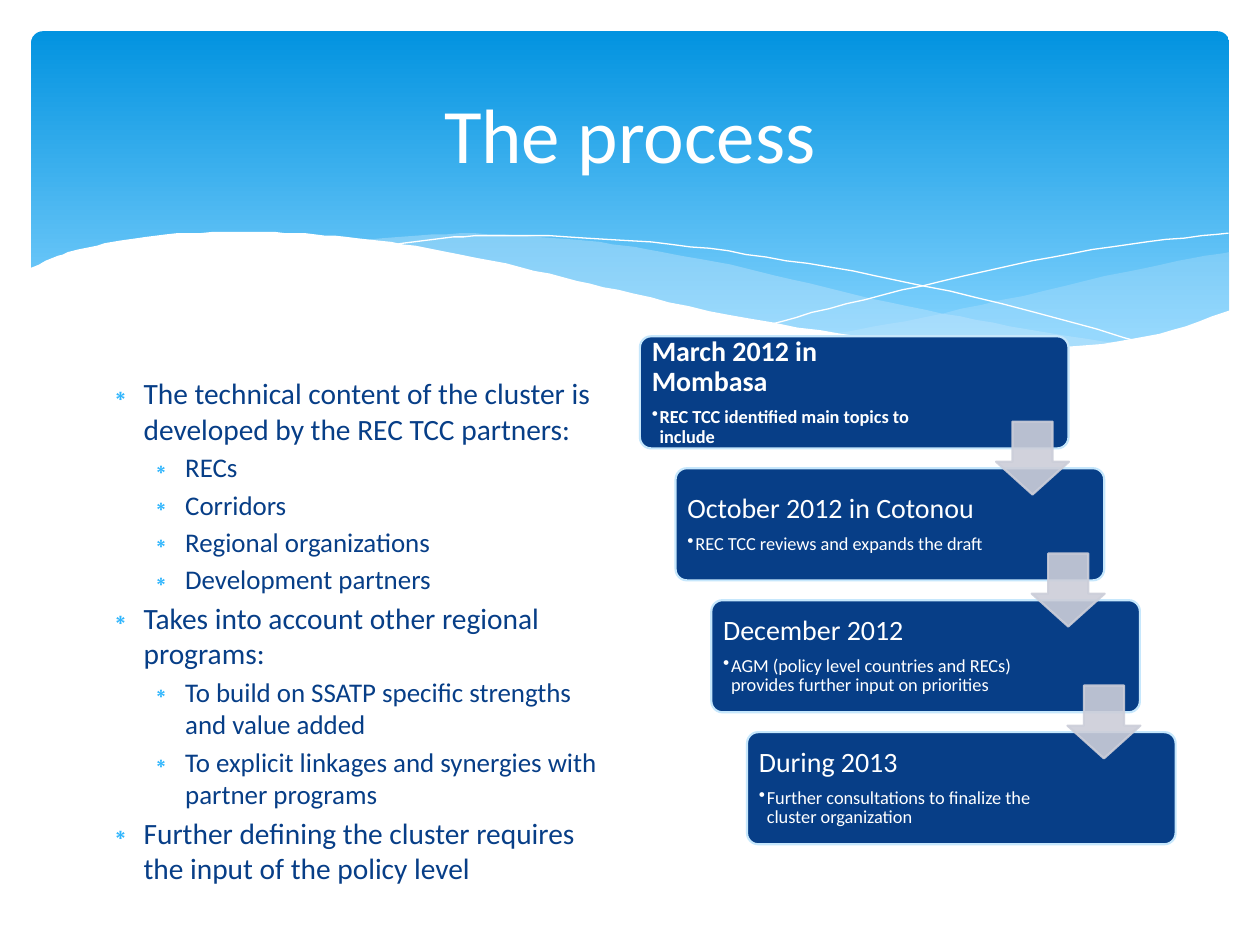
from dataclasses import dataclass
from lxml import etree
from pptx import Presentation
from pptx.dml.color import RGBColor
from pptx.enum.shapes import MSO_SHAPE
from pptx.enum.text import MSO_ANCHOR, MSO_AUTO_SIZE, PP_ALIGN
from pptx.oxml.ns import qn
from pptx.util import Cm, Pt

ROUND, ARROW = MSO_SHAPE.ROUNDED_RECTANGLE, MSO_SHAPE.DOWN_ARROW
MIDDLE, TOP = MSO_ANCHOR.MIDDLE, MSO_ANCHOR.TOP
LEFT, CENTER = PP_ALIGN.LEFT, PP_ALIGN.CENTER
FIXED = MSO_AUTO_SIZE.NONE


@dataclass(frozen=True)
class Theme:
    font: str = "Calibri"
    white: str = "FFFFFF"
    navy: str = "073E87"
    sky: str = "31B6FD"
    pale: str = "C6E7FC"
    gray: str = "CCCED9"
    deep: str = "0293E0"
    light: str = "83D3FE"
    title: float = 44
    main: float = 16.8
    sub: float = 15.4
    head: float = 16
    note: float = 10.5
    edge: float = 1.25


THEME = Theme()
UNIT = Cm(0.0254)

# Curves hold knots in hundredths of an inch.
RIGHT_WAVE = [
    [(976, 200), (935, 207), (861, 223), (779, 242), (706, 257), (661, 265)],
    [(661, 265), (705, 271), (757, 276), (814, 278), (872, 274), (928, 263), (976, 247)],
]
MID_WAVE = [
    [(893, 273), (837, 265), (775, 254), (706, 240), (629, 222), (569, 208),
     (514, 198), (465, 191), (399, 186), (344, 186), (286, 191)],
    [(286, 191), (342, 199), (404, 211), (491, 232), (584, 252), (650, 264),
     (709, 272), (761, 277), (818, 278), (857, 277), (893, 273)],
]
LONG_LINE = [[(309, 195), (344, 190), (387, 187), (450, 188), (533, 194),
              (608, 204), (695, 219), (795, 241), (907, 272)]]
CROSS_LINE = [[(613, 257), (672, 241), (748, 223), (836, 204), (910, 192), (975, 185)]]
FRONT_WAVE = [
    [(977, 246), (930, 262), (875, 273), (809, 277), (744, 274), (668, 265),
     (579, 250), (503, 233), (447, 220), (391, 207), (340, 197), (292, 190),
     (250, 186), (211, 184), (177, 184), (132, 186), (95, 191), (67, 197),
     (46, 203), (23, 213)],
    [(23, 329)],
    [(977, 329)],
]

POINTS = [
    (0, "The technical content of the cluster is developed by the REC TCC partners:"),
    (1, "RECs"),
    (1, "Corridors"),
    (1, "Regional organizations"),
    (1, "Development partners"),
    (0, "Takes into account other regional programs:"),
    (1, "To build on SSATP specific strengths and value added"),
    (1, "To explicit linkages and synergies with partner programs"),
    (0, "Further defining the cluster requires the input of the policy level"),
]
STEPS = [
    ("March 2012 in Mombasa", "REC TCC identified main topics to include"),
    ("October 2012 in Cotonou", "REC TCC reviews and expands the draft"),
    ("December 2012", "AGM (policy level countries and RECs) provides further input on priorities"),
    ("During 2013", "Further consultations to finalize the cluster organization"),
]


def paint(part, fill=None, line=None, width=0, alpha=100):
    part.shadow.inherit = False
    for ink, hue in ((part.fill, fill), (part.line.fill, line)):
        if hue is None:
            ink.background()
        else:
            ink.solid()
            ink.fore_color.rgb = RGBColor.from_string(hue)
    if line:
        part.line.width = Pt(width)
    if alpha < 100:
        for node in part.element.spPr.iter(qn("a:srgbClr")):
            etree.SubElement(node, qn("a:alpha")).set("val", str(alpha * 1000))


def write(frame, text, size, color, first=False, level=0, bold=False, align=LEFT,
          mark=None, tint=None, indent=0, hang=0, before=0, after=0, pitch=1):
    para = frame.paragraphs[0] if first else frame.add_paragraph()
    para.level = level
    if mark:
        props = para._p.get_or_add_pPr()
        props.set("marL", str(Cm(indent)))
        props.set("indent", str(-Cm(hang)))
        shade = etree.SubElement(props, qn("a:buClr"))
        etree.SubElement(shade, qn("a:srgbClr")).set("val", tint or color)
        etree.SubElement(props, qn("a:buChar")).set("char", mark)
    para.alignment = align
    para.line_spacing = pitch
    para.space_before = Pt(0 if first else before)
    para.space_after = Pt(after)
    run = para.add_run()
    run.text = text
    run.font.name, run.font.size, run.font.bold = THEME.font, Pt(size), bold
    run.font.color.rgb = RGBColor.from_string(color)


def set_frame(part, anchor, pad=None):
    frame = part.text_frame
    frame.word_wrap, frame.auto_size = True, FIXED
    frame.vertical_anchor = anchor
    if pad is not None:
        frame.margin_left = frame.margin_right = Cm(pad)
        frame.margin_top = frame.margin_bottom = Cm(pad)
    return frame


def place(part, box):
    part.left, part.top, part.width, part.height = map(Cm, box)


def smooth(knots, count=5):
    ends = [knots[0], *knots, knots[-1]]
    path = [knots[0]]
    for a, b, c, d in zip(ends, ends[1:], ends[2:], ends[3:]):
        for step in range(1, count + 1):
            t = step / count
            path.append(tuple(
                (2 * q + (r - p) * t + (2 * p - 5 * q + 4 * r - s) * t**2
                 + (3 * q - p - 3 * r + s) * t**3) / 2
                for p, q, r, s in zip(a, b, c, d)))
    return path


def add_wave(shapes, box, curves, closed=True, **look):
    path = [spot for knots in curves for spot in smooth(knots)]
    pen = shapes.build_freeform(*path[0], scale=UNIT)
    pen.add_line_segments(path[1:], close=closed)
    paint(pen.convert_to_shape(Cm(box[0]), Cm(box[1])), **look)


def add_header(shapes, box):
    x, y, w, h = box
    panel = shapes.add_shape(ROUND, Cm(x + 0.63), Cm(y + 0.63), Cm(w - 1.25), Cm(h - 0.63))
    panel.adjustments[0] = 0.034
    paint(panel)
    panel.fill.gradient()
    panel.fill.gradient_angle = 270
    for stop, hue, spot in zip(panel.fill.gradient_stops, (THEME.deep, THEME.light), (0, 0.9)):
        stop.color.rgb = RGBColor.from_string(hue)
        stop.position = spot
    add_wave(shapes, box, RIGHT_WAVE, fill=THEME.pale, alpha=29)
    add_wave(shapes, box, MID_WAVE, fill=THEME.pale, alpha=40)
    for curve in (LONG_LINE, CROSS_LINE):
        add_wave(shapes, box, curve, closed=False, line=THEME.white)
    add_wave(shapes, box, FRONT_WAVE, fill=THEME.white)


def add_title(part, box):
    place(part, box)
    write(set_frame(part, MIDDLE), "The process", THEME.title, THEME.white,
          first=True, align=CENTER)


def add_list(part, box):
    place(part, box)
    frame = set_frame(part, TOP)
    for row, (level, text) in enumerate(POINTS):
        write(frame, text, (THEME.main, THEME.sub)[level], THEME.navy, first=row == 0,
              level=level, mark="∗", tint=THEME.sky, indent=(0.76, 1.6)[level],
              hang=0.76, before=2.8)


def add_steps(shapes, box):
    x, y, w, h = box
    wide, high = 8.64, 2.26
    last = len(STEPS) - 1
    spots = [(x + (w - wide) * row / last, y + (h - high) * row / last)
             for row in range(len(STEPS))]
    for row, ((left, top), (head, note)) in enumerate(zip(spots, STEPS)):
        card = shapes.add_shape(ROUND, Cm(left), Cm(top), Cm(wide), Cm(high))
        card.adjustments[0] = 0.1
        paint(card, THEME.navy, THEME.pale, THEME.edge)
        label = shapes.add_textbox(Cm(left + 0.07), Cm(top + 0.07),
                                   Cm(6.32 if row else 6.02), Cm(high - 0.14))
        frame = set_frame(label, MIDDLE, 0.17)
        bold = row == 0
        write(frame, head, THEME.head, THEME.white, first=True, bold=bold,
              after=5.4, pitch=0.9)
        write(frame, note, THEME.note, THEME.white, level=1, bold=bold, mark="•",
              indent=0.16, hang=0.16, after=1.6, pitch=0.9)
    for left, top in spots[:-1]:
        arrow = shapes.add_shape(ARROW, Cm(left + 7.18), Cm(top + 1.72), Cm(1.47), Cm(1.47))
        arrow.adjustments[0], arrow.adjustments[1] = 0.55, 0.45
        paint(arrow, THEME.gray, THEME.gray, THEME.edge, alpha=90)


def main():
    deck = Presentation()
    deck.slide_width, deck.slide_height = Cm(25.4), Cm(19.05)
    slide = deck.slides.add_slide(deck.slide_layouts[1])
    title, body = slide.placeholders
    shapes = slide.shapes
    add_header(shapes, (0, 0, 25.4, 7.49))
    for part in (title, body):
        shapes._spTree.append(part.element)
    add_title(title, (1.27, 0.94, 22.86, 3.48))
    add_list(body, (1.88, 7.44, 10.62, 9.58))
    add_steps(shapes, (12.9, 6.78, 10.8, 10.24))
    deck.save("out.pptx")


if __name__ == "__main__":
    main()
